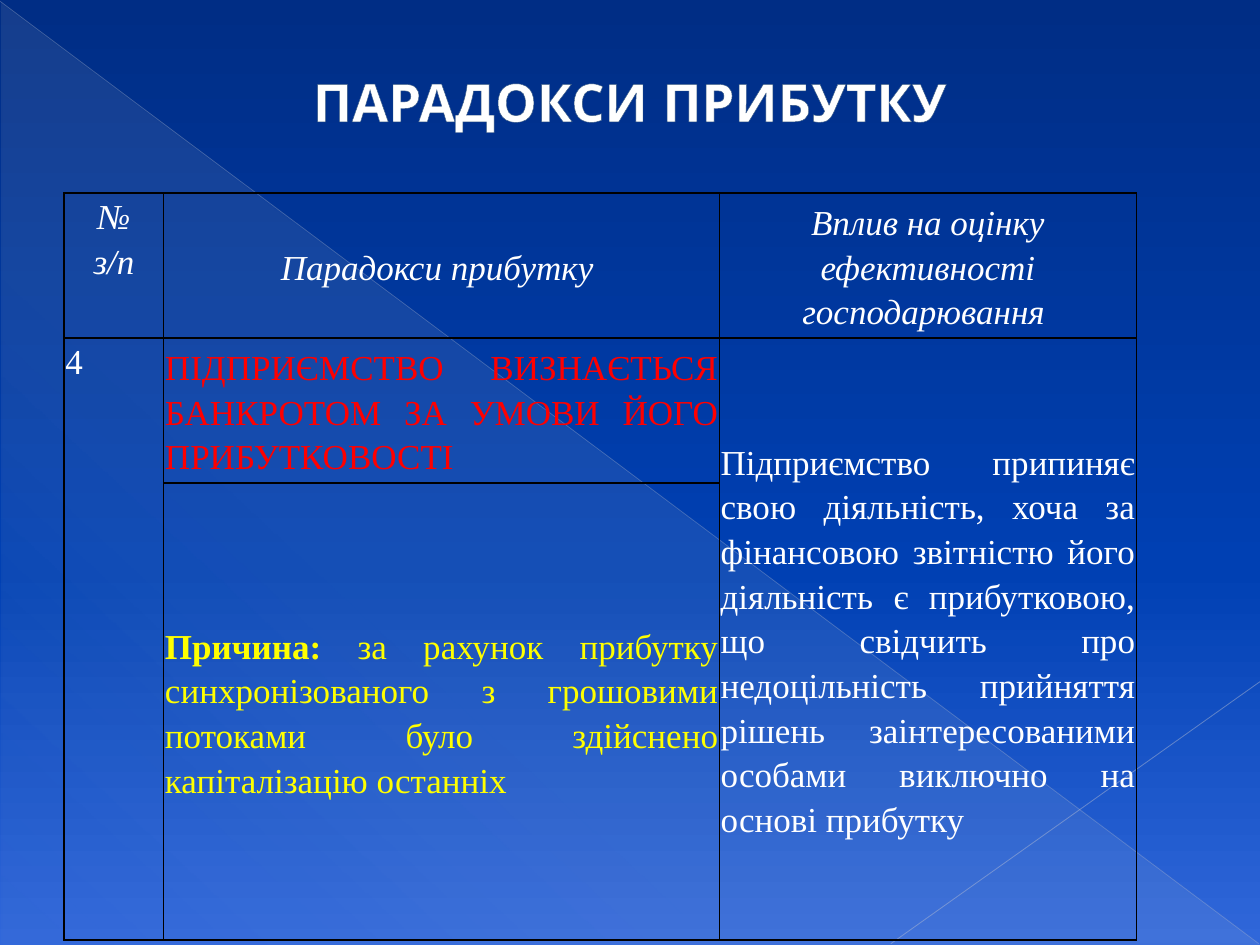
from dataclasses import dataclass

from lxml import etree
from pptx import Presentation
from pptx.dml.color import RGBColor
from pptx.enum.shapes import MSO_CONNECTOR, MSO_SHAPE
from pptx.enum.text import MSO_ANCHOR as Anchor, PP_ALIGN as Align
from pptx.oxml import parse_xml
from pptx.oxml.ns import nsdecls, qn
from pptx.util import Inches, Pt


@dataclass(frozen=True)
class Theme:
    white: str = "FFFFFF"
    red: str = "FF0000"
    yellow: str = "FFFF00"
    border: str = "000000"
    title_outline: str = "375983"
    sky: tuple = ((0, "002D85", 100), (60, "0040B3", 100), (100, "3067DA", 100))
    glow: tuple = ((0, "EEECE1", 10), (70, "EEECE1", 8), (100, "EEECE1", 1))
    title_font: str = "Quicksand"
    body_font: str = "Times New Roman"
    title_size: int = 30
    body_size: int = 20


theme = Theme()


def color_xml(color, alpha=100):
    return f'<a:srgbClr val="{color}"><a:alpha val="{alpha * 1000}"/></a:srgbClr>'


def set_gradient(fill, owner, stops, angle):
    """Fill with (position, colour, opacity) stops at a clockwise angle."""
    fill.gradient()
    stop_xml = "".join(f'<a:gs pos="{pos * 1000}">{color_xml(color, alpha)}</a:gs>'
                       for pos, color, alpha in stops)
    blank = next(owner.iter(qn("a:gradFill")))
    blank.getparent().replace(blank, parse_xml(
        f'<a:gradFill {nsdecls("a")} rotWithShape="1"><a:gsLst>{stop_xml}</a:gsLst>'
        f'<a:lin ang="{angle * 60000}" scaled="0"/></a:gradFill>'))


prs = Presentation()
prs.slide_width, prs.slide_height = Inches(10), Inches(7.5)
slide = prs.slides.add_slide(prs.slide_layouts[6])

# Background with a pale triangle and two thin rays
set_gradient(slide.background.fill, slide.element, theme.sky, 90)
glow = slide.shapes.add_shape(MSO_SHAPE.RIGHT_TRIANGLE, Inches(0.01), Inches(0.02),
                              Inches(9.99), Inches(7.48))
glow.shadow.inherit = False
glow.line.fill.background()
set_gradient(glow.fill, glow.element, theme.glow, 133)

for x1, y1, x2, y2, color, width, alpha in (
        (0, 0.01, 9.99, 7.49, "ADB6CE", 0.39, 35),
        (10, 5.41, 7.07, 7.49, "B6BED3", 0.47, 45)):
    ray = slide.shapes.add_connector(MSO_CONNECTOR.STRAIGHT, Inches(x1), Inches(y1),
                                     Inches(x2), Inches(y2))
    ray.line.width = Pt(width)
    ray.line.color.rgb = RGBColor.from_string(color)
    ray_color = next(ray.element.spPr.iter(qn("a:srgbClr")))
    etree.SubElement(ray_color, qn("a:alpha"), val=str(alpha * 1000))
    etree.SubElement(ray.element.spPr, qn("a:effectLst"))

# Title
title = slide.shapes.add_textbox(Inches(0.5), Inches(0.29), Inches(9), Inches(1.02)).text_frame
title.word_wrap = True
title.vertical_anchor = Anchor.MIDDLE
heading = title.paragraphs[0]
heading.alignment = Align.CENTER
heading_run = heading.add_run()
heading_run.text = "ПАРАДОКСИ ПРИБУТКУ"
font = heading_run.font
font.name, font.size, font.bold = theme.title_font, Pt(theme.title_size), True
font.color.rgb = RGBColor.from_string(theme.white)
heading_run._r.get_or_add_rPr().insert(0, parse_xml(
    f'<a:ln {nsdecls("a")} w="6350"><a:solidFill>{color_xml(theme.title_outline)}'
    '</a:solidFill></a:ln>'))

# Table grid
paradoxes = slide.shapes.add_table(3, 3, Inches(0.51), Inches(1.53),
                                   Inches(8.5), Inches(5.9)).table
paradoxes.first_row = paradoxes.horz_banding = False
for column, width in zip(paradoxes.columns, (0.79, 4.41, 3.31)):
    column.width = Inches(width)
for row, height in zip(paradoxes.rows, (1.14, 1.14, 3.63)):
    row.height = Inches(height)
for col in (0, 2):
    paradoxes.cell(1, col).merge(paradoxes.cell(2, col))

for cell in paradoxes.iter_cells():
    cell.margin_left = cell.margin_right = Inches(0.01)
    cell.margin_top = cell.margin_bottom = 0
    cell_props = cell._tc.get_or_add_tcPr()
    for side in ("lnL", "lnR", "lnT", "lnB"):
        cell_props.append(parse_xml(
            f'<a:{side} {nsdecls("a")} w="12700"><a:solidFill>{color_xml(theme.border)}'
            f'</a:solidFill></a:{side}>'))
    cell.fill.background()

# Table text: row, column, anchor, colour, paragraphs made of (text, bold) runs
contents = (
    (0, 0, Anchor.TOP, theme.white, [[("№", False)], [("з/п", False)]]),
    (0, 1, Anchor.MIDDLE, theme.white, [[("Парадокси прибутку ", False)]]),
    (0, 2, Anchor.MIDDLE, theme.white,
     [[("Вплив на оцінку ефективності господарювання ", False)]]),
    (1, 0, Anchor.TOP, theme.white, [[("4", False)]]),
    (1, 1, Anchor.MIDDLE, theme.red,
     [[("ПІДПРИЄМСТВО ВИЗНАЄТЬСЯ БАНКРОТОМ ЗА УМОВИ ЙОГО ПРИБУТКОВОСТІ ", False)]]),
    (1, 2, Anchor.MIDDLE, theme.white,
     [[("Підприємство припиняє свою діяльність, хоча за фінансовою звітністю його "
        "діяльність є прибутковою, що свідчить про недоцільність прийняття рішень "
        "заінтересованими особами виключно на основі прибутку ", False)]]),
    (2, 1, Anchor.MIDDLE, theme.yellow,
     [[("Причина: ", True),
       ("за рахунок прибутку синхронізованого з грошовими потоками було здійснено "
        "капіталізацію останніх ", False)]]),
)
for row, col, anchor, color, paragraphs in contents:
    cell = paradoxes.cell(row, col)
    cell.vertical_anchor = anchor
    for index, runs in enumerate(paragraphs):
        frame = cell.text_frame
        paragraph = frame.add_paragraph() if index else frame.paragraphs[0]
        paragraph.alignment = Align.JUSTIFY if row else Align.CENTER
        paragraph.line_spacing = 1.15
        font = paragraph.font
        font.name, font.size, font.italic = theme.body_font, Pt(theme.body_size), row == 0
        font.color.rgb = RGBColor.from_string(color)
        for text, bold in runs:
            run = paragraph.add_run()
            run.text, run.font.bold = text, bold

prs.save("out.pptx")
